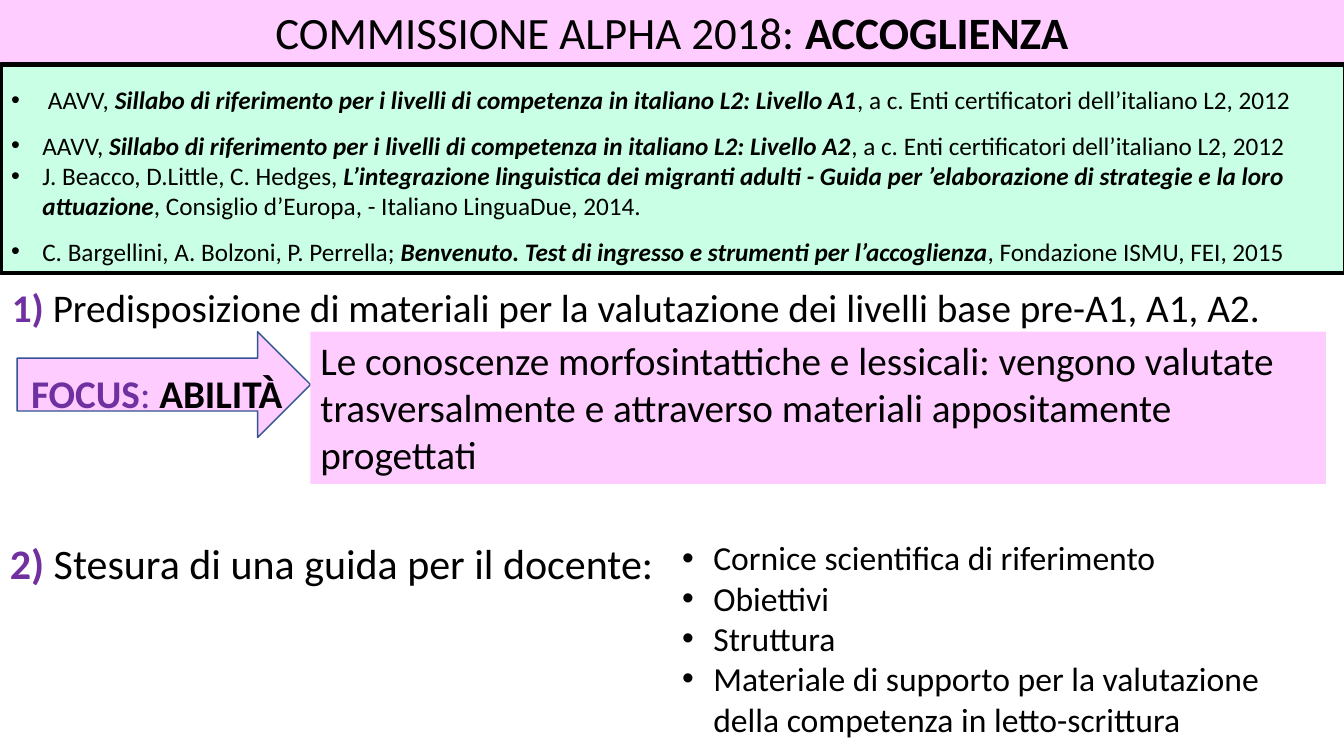
from pptx import Presentation
from pptx.dml.color import RGBColor
from pptx.enum.shapes import MSO_SHAPE
from pptx.enum.text import MSO_ANCHOR, MSO_AUTO_SIZE, PP_ALIGN
from pptx.oxml.ns import qn
from pptx.util import Inches, Pt
from lxml import etree

TOP, NO_FIT = MSO_ANCHOR.TOP, MSO_AUTO_SIZE.NONE
LEFT, CENTER = PP_ALIGN.LEFT, PP_ALIGN.CENTER
RIGHT_ARROW, RECTANGLE = MSO_SHAPE.RIGHT_ARROW, MSO_SHAPE.RECTANGLE

BLACK = RGBColor(0x00, 0x00, 0x00)
PURPLE = RGBColor(0x70, 0x30, 0xA0)
PINK = RGBColor(0xFF, 0xCC, 0xFF)
MINT = RGBColor(0xC9, 0xFF, 0xE4)
BLUE = RGBColor(0x32, 0x54, 0x91)
FONT = "Calibri"
SLIDE_W, SLIDE_H = 13.33, 7.5
INDENT = 0.31

# Content: a paragraph is a list of (text, style); styles: b bold, i italic, p purple
HEADING = [[("COMMISSIONE ALPHA 2018: ", ""), ("ACCOGLIENZA", "b")]]
# (authors, work, publisher, line spacing)
REFERENCES = [
    (" AAVV, ", "Sillabo di riferimento per i livelli di competenza in italiano L2: Livello A1",
     ", a c. Enti certificatori dell’italiano L2, 2012", 1.5),
    ("AAVV, ", "Sillabo di riferimento per i livelli di competenza in italiano L2: Livello A2",
     ", a c. Enti certificatori dell’italiano L2, 2012", 1.5),
    ("J. Beacco, D.Little, C. Hedges, ",
     "L’integrazione linguistica dei migranti adulti - Guida per ’elaborazione di strategie "
     "e la loro attuazione", ", Consiglio d’Europa, - Italiano LinguaDue, 2014.", 1.0),
    ("C. Bargellini, A. Bolzoni, P. Perrella; ",
     "Benvenuto. Test di ingresso e strumenti per l’accoglienza",
     ", Fondazione ISMU, FEI, 2015", 1.5),
]
GUIDE_PARTS = [
    "Cornice scientifica di riferimento",
    "Obiettivi",
    "Struttura",
    "Materiale di supporto per la valutazione della competenza in letto-scrittura",
]
STEP_ONE = [[("1) ", "bp"), ("Predisposizione di materiali per la valutazione dei livelli "
                             "base pre-A1, A1, A2.", "")]]
FOCUS = [[("FOCUS", "bp"), (": ", "p"), ("ABILITÀ", "b")]]
KNOWLEDGE = [
    [("Le conoscenze morfosintattiche e lessicali: vengono valutate", "")],
    [("trasversalmente e attraverso materiali appositamente progettati", "")],
]
STEP_TWO = [[("2) ", "bp"), ("Stesura di una guida per il docente:", "")]]

# Horizontal bands, in inches
HEADING_H = 0.64
REFERENCES_H = 2.07
FOCUS_TOP = 3.29
ARROW_LEFT, ARROW_W = 0.17, 2.91
ARROW_END = ARROW_LEFT + ARROW_W
GUIDE_TOP = 5.28
GUIDE_LEFT = SLIDE_W / 2


def place(shape, left, top, width, height):
    shape.left, shape.top = Inches(left), Inches(top)
    shape.width, shape.height = Inches(width), Inches(height)


def paint(shape, fill, line=None, weight=0):
    shape.fill.solid()
    shape.fill.fore_color.rgb = fill
    if line is None:
        shape.line.fill.background()
    else:
        shape.line.color.rgb = line
        shape.line.width = Pt(weight)


def add_bullet(paragraph):
    properties = paragraph._p.get_or_add_pPr()
    properties.set("marL", str(Inches(INDENT)))
    properties.set("indent", str(-Inches(INDENT)))
    etree.SubElement(properties, qn("a:buFont")).set("typeface", "Arial")
    etree.SubElement(properties, qn("a:buChar")).set("char", "•")


def write(shape, paragraphs, size, align=LEFT, spacings=None, bullets=False):
    frame = shape.text_frame
    frame.word_wrap, frame.auto_size, frame.vertical_anchor = True, NO_FIT, TOP
    for index, runs in enumerate(paragraphs):
        paragraph = frame.add_paragraph() if index else frame.paragraphs[0]
        paragraph.alignment = align
        paragraph.space_before = Pt(0)
        paragraph.line_spacing = spacings[index] if spacings else 1.0
        paragraph.font.name, paragraph.font.size = FONT, Pt(size)
        if bullets:
            add_bullet(paragraph)
        for text, style in runs:
            run = paragraph.add_run()
            run.text = text
            run.font.name, run.font.size = FONT, Pt(size)
            run.font.bold, run.font.italic = "b" in style, "i" in style
            run.font.color.rgb = PURPLE if "p" in style else BLACK


def add_block(kind, left, top, width, height, line=None):
    block = slide.shapes.add_shape(kind, 0, 0, 0, 0)
    place(block, left, top, width, height)
    block.shadow.inherit = False
    paint(block, PINK, line, 1)
    return block


def add_label(paragraphs, size, left, top, width, height):
    label = slide.shapes.add_textbox(0, 0, 0, 0)
    place(label, left, top, width, height)
    write(label, paragraphs, size)


prs = Presentation()
prs.slide_width, prs.slide_height = Inches(SLIDE_W), Inches(SLIDE_H)
slide = prs.slides.add_slide(prs.slide_layouts.get_by_name("Two Content"))
heading, references, guide = list(slide.placeholders)[:3]
for footer in list(slide.placeholders)[3:]:
    footer.element.getparent().remove(footer.element)

# Heading band and bibliography
place(heading, 0, 0, SLIDE_W, HEADING_H)
paint(heading, PINK)
write(heading, HEADING, 32, CENTER)

place(references, 0.01, HEADING_H, SLIDE_W, REFERENCES_H)
paint(references, MINT, BLACK, 3)
write(references, [[(authors, ""), (work, "bi"), (publisher, "")]
                   for authors, work, publisher, _ in REFERENCES],
      18, spacings=[spacing for *_, spacing in REFERENCES], bullets=True)

# Step one: materials, with the focus arrow
add_label(STEP_ONE, 28, 0.02, 2.76, 13.5, 0.57)
add_block(RIGHT_ARROW, ARROW_LEFT, FOCUS_TOP, ARROW_W, 1.05, BLUE)
knowledge = add_block(RECTANGLE, ARROW_END, FOCUS_TOP, 10.07, 1.51)
write(knowledge, KNOWLEDGE, 28)
add_label(FOCUS, 28, 0.21, 3.61, ARROW_END - 0.21, 0.57)

# Step two: guide for the teacher
add_label(STEP_TWO, 30, 0, GUIDE_TOP, 6.77, 0.61)
place(guide, GUIDE_LEFT, GUIDE_TOP, 6.13, 2.12)
write(guide, [[(part, "")] for part in GUIDE_PARTS], 24, bullets=True)

prs.save("out.pptx")
